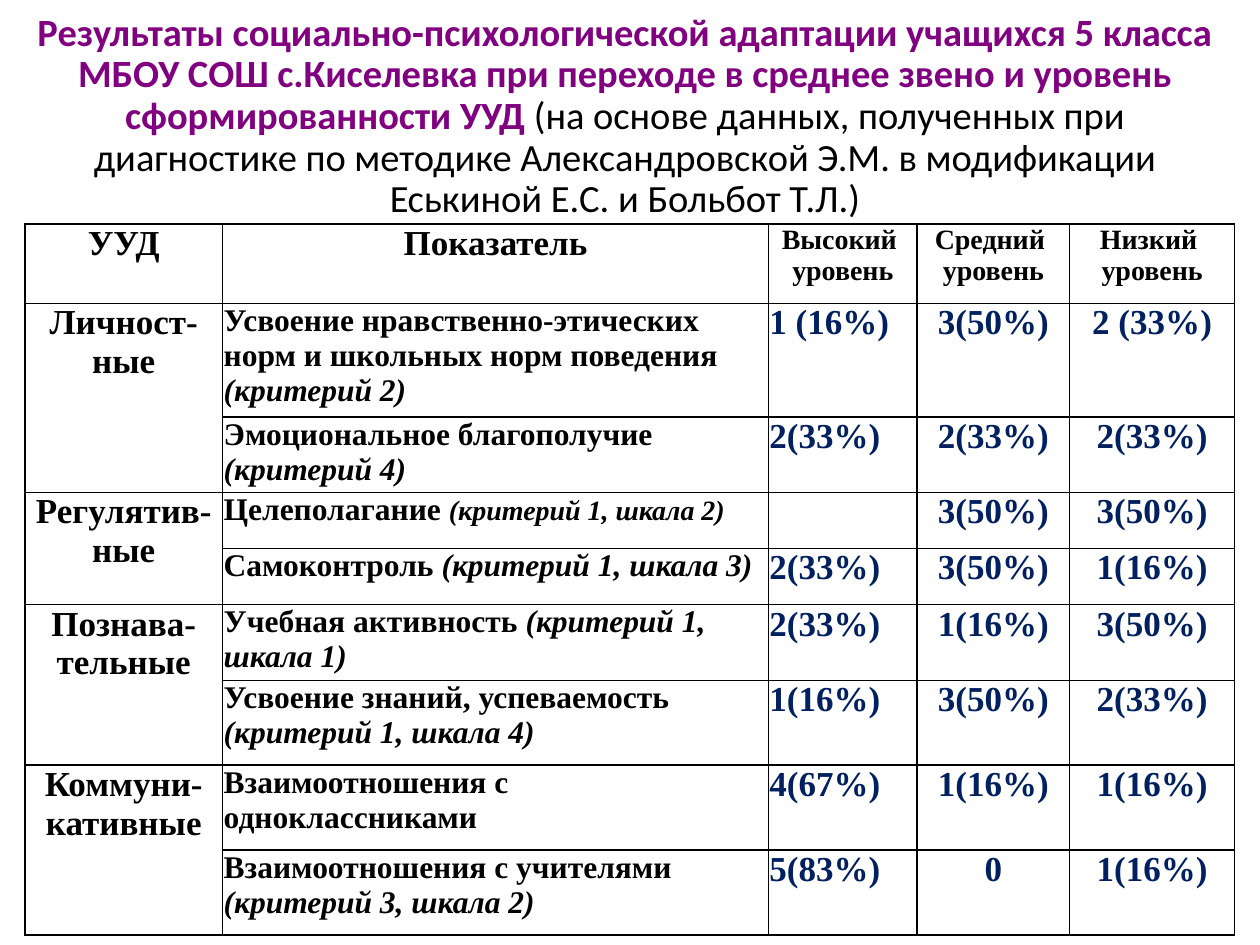
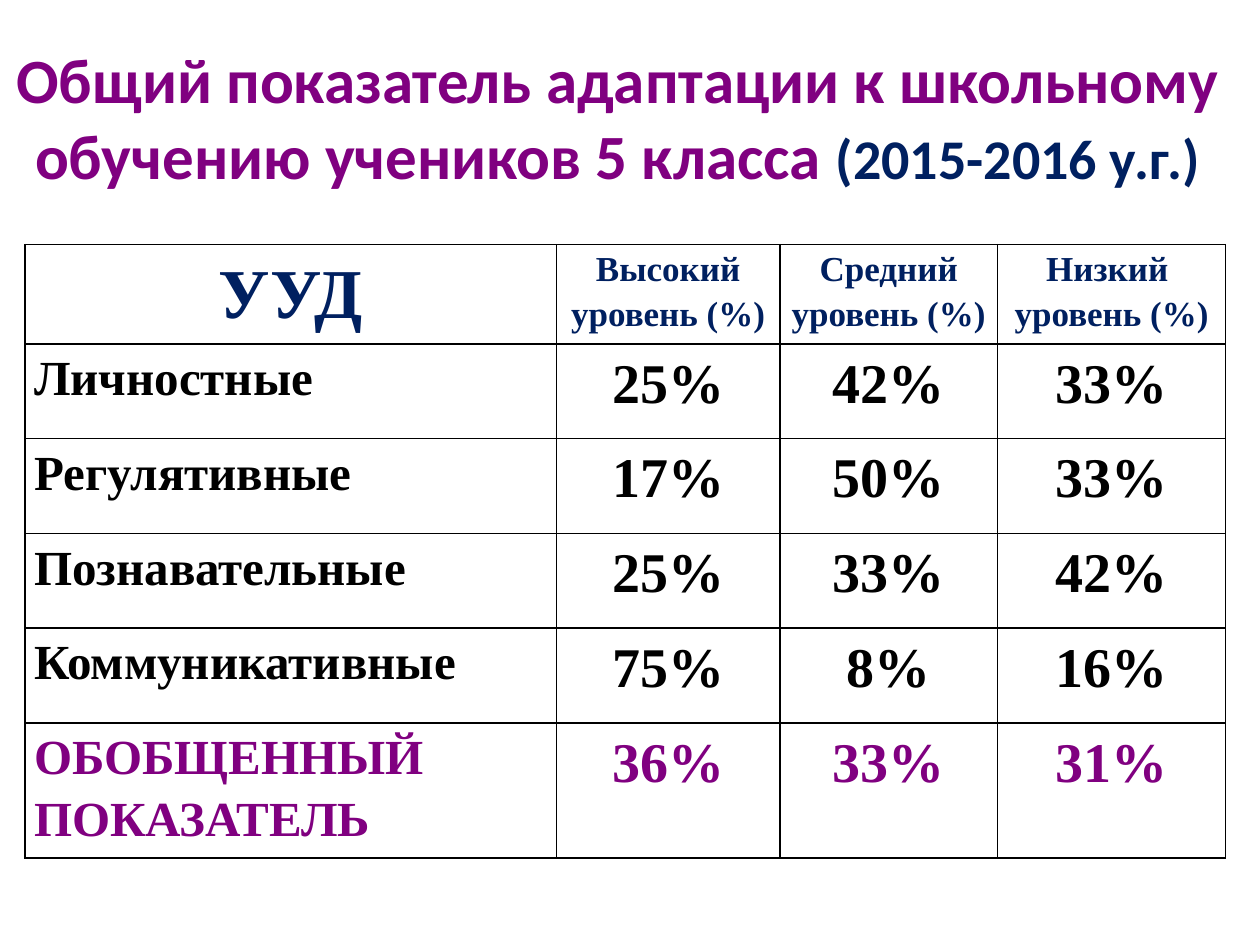
"""Build two slides on how fifth-year pupils adapt to middle school."""
import pptx
import pptx.dml.color
import pptx.enum.text
import pptx.util
import lxml.etree

Cm = pptx.util.Cm
Pt = pptx.util.Pt
hue = pptx.dml.color.RGBColor.from_string
MID = pptx.enum.text.PP_ALIGN.CENTER
LEFT = pptx.enum.text.PP_ALIGN.LEFT
PURPLE, NAVY, BLACK = "800080", "002060", "000000"
SERIF, SANS = "Times New Roman", "Calibri"
EDGE = 0.5
NS = "http://schemas.openxmlformats.org/drawingml/2006/main"


def put(frame, text, size, tint, align=MID, gap=1.0, face=SERIF, tail=""):
    """Write bold text into a frame and return the run that holds the tail."""
    frame.text = text
    extra = None
    if tail:
        extra = frame.paragraphs[-1].add_run()
        extra.text = tail
    for para in frame.paragraphs:
        para.alignment = align
        para.line_spacing = gap
        for run in para.runs:
            run.font.name = face
            run.font.size = Pt(size)
            run.font.bold = True
            run.font.color.rgb = hue(tint)
    return extra


def grid(slide, top, cols, rows, inset):
    """Add a plain table with thin black borders."""
    frame = slide.shapes.add_table(len(rows), len(cols), Cm(EDGE), Cm(top),
                                   Cm(sum(cols)), Cm(sum(rows)))
    table = frame.table
    table.first_row = table.horz_banding = False
    for col, width in zip(table.columns, cols):
        col.width = Cm(width)
    for row, height in zip(table.rows, rows):
        row.height = Cm(height)
    for cell in table.iter_cells():
        cell.margin_left = cell.margin_right = Cm(inset)
        cell.margin_top = cell.margin_bottom = 0
        props = cell._tc.get_or_add_tcPr()
        for side in "LRTB":
            line = lxml.etree.SubElement(props, f"{{{NS}}}ln{side}", w=str(Pt(1)))
            fill = lxml.etree.SubElement(line, f"{{{NS}}}solidFill")
            lxml.etree.SubElement(fill, f"{{{NS}}}srgbClr", val=BLACK)
        cell.fill.background()
    return table


deck = pptx.Presentation()
deck.slide_width, deck.slide_height = Cm(25.4), Cm(19.05)

heads = [
    ((EDGE, 0, 24.2, 4.72), 22, 0.9,
     "Результаты социально-психологической адаптации учащихся 5 класса "
     "МБОУ СОШ с.Киселевка при переходе в среднее звено и уровень "
     "сформированности УУД ",
     "(на основе данных, полученных при диагностике по методике "
     "Александровской Э.М. в модификации Еськиной Е.С. и Больбот Т.Л.)",
     22, BLACK, False),
    ((0, 0.76, 24.9, 3.18), 36, 1.0,
     "Общий показатель адаптации к школьному обучению учеников 5 класса ",
     "(2015-2016 у.г.)", 32, NAVY, True),
]
slides = []
for place, size, gap, text, tail, small, tint, bold in heads:
    slide = deck.slides.add_slide(deck.slide_layouts[6])
    title = slide.shapes.add_textbox(*map(Cm, place)).text_frame
    title.word_wrap = True
    title.vertical_anchor = pptx.enum.text.MSO_ANCHOR.MIDDLE
    run = put(title, text, size, PURPLE, gap=gap, face=SANS, tail=tail)
    run.font.size = Pt(small)
    run.font.bold = bold
    run.font.color.rgb = hue(tint)
    slides.append(slide)

table = grid(slides[0], 4.52, [3.99, 11, 3, 3.07, 3.33],
             [1.6, 2.12, 1.41, 1.13, 1.13, 1.41, 1.71, 1.71, 1.71], 0.02)
labels = ["УУД", "Показатель", "Высокий \nуровень", "Средний \nуровень",
          "Низкий \nуровень"]
for col, label in enumerate(labels):
    put(table.cell(0, col).text_frame, label, 20 if col < 2 else 16, BLACK)

groups = ["Личност-ные", "Регулятив-ные", "Познава-тельные", "Коммуни-кативные"]
for pos, group in enumerate(groups):
    top = 1 + 2 * pos
    table.cell(top, 0).merge(table.cell(top + 1, 0))
    put(table.cell(top, 0).text_frame, group, 20, BLACK)

signs = [
    ("Усвоение нравственно-этических норм и школьных норм поведения ",
     "(критерий 2)", 18, "1 (16%)", "3(50%)", "2 (33%)"),
    ("Эмоциональное благополучие ", "(критерий 4)", 18,
     "2(33%)", "2(33%)", "2(33%)"),
    ("Целеполагание ", "(критерий 1, шкала 2)", 16, "", "3(50%)", "3(50%)"),
    ("Самоконтроль ", "(критерий 1, шкала 3)", 18, "2(33%)", "3(50%)", "1(16%)"),
    ("Учебная активность ", "(критерий 1, шкала 1)", 18,
     "2(33%)", "1(16%)", "3(50%)"),
    ("Усвоение знаний, успеваемость ", "(критерий 1, шкала 4)", 18,
     "1(16%)", "3(50%)", "2(33%)"),
    ("Взаимоотношения с одноклассниками", "", 18, "4(67%)", "1(16%)", "1(16%)"),
    ("Взаимоотношения с учителями ", "(критерий 3, шкала 2)", 18,
     "5(83%)", "0", "1(16%)"),
]
for row, (sign, note, small, *marks) in enumerate(signs, 1):
    run = put(table.cell(row, 1).text_frame, sign, 18, BLACK, LEFT, tail=note)
    if run:
        run.font.size = Pt(small)
        run.font.italic = True
    for col, mark in enumerate(marks, 2):
        put(table.cell(row, col).text_frame, mark, 20, NAVY,
            LEFT if col == 2 else MID)

table = grid(slides[1], 4.93, [10.72, 4.5, 4.39, 4.6],
             [2, 1.91, 1.91, 1.91, 1.91, 2.5], 0.19)
labels = ["УУД", "Высокий\nуровень (%)", "Средний уровень (%)",
          "Низкий \nуровень (%)"]
for col, label in enumerate(labels):
    put(table.cell(0, col).text_frame, label, 20 if col else 40, NAVY, gap=1.15)

totals = [
    ("Личностные", "25%", "42%", "33%"),
    ("Регулятивные", "17%", "50%", "33%"),
    ("Познавательные", "25%", "33%", "42%"),
    ("Коммуникативные", "75%", "8%", "16%"),
    ("ОБОБЩЕННЫЙ ПОКАЗАТЕЛЬ", "36%", "33%", "31%"),
]
for row, (name, *shares) in enumerate(totals, 1):
    tint = PURPLE if row == len(totals) else BLACK
    put(table.cell(row, 0).text_frame, name, 28, tint, LEFT, 1.15)
    for col, share in enumerate(shares, 1):
        put(table.cell(row, col).text_frame, share, 32, tint, gap=1.15)

deck.save("out.pptx")
